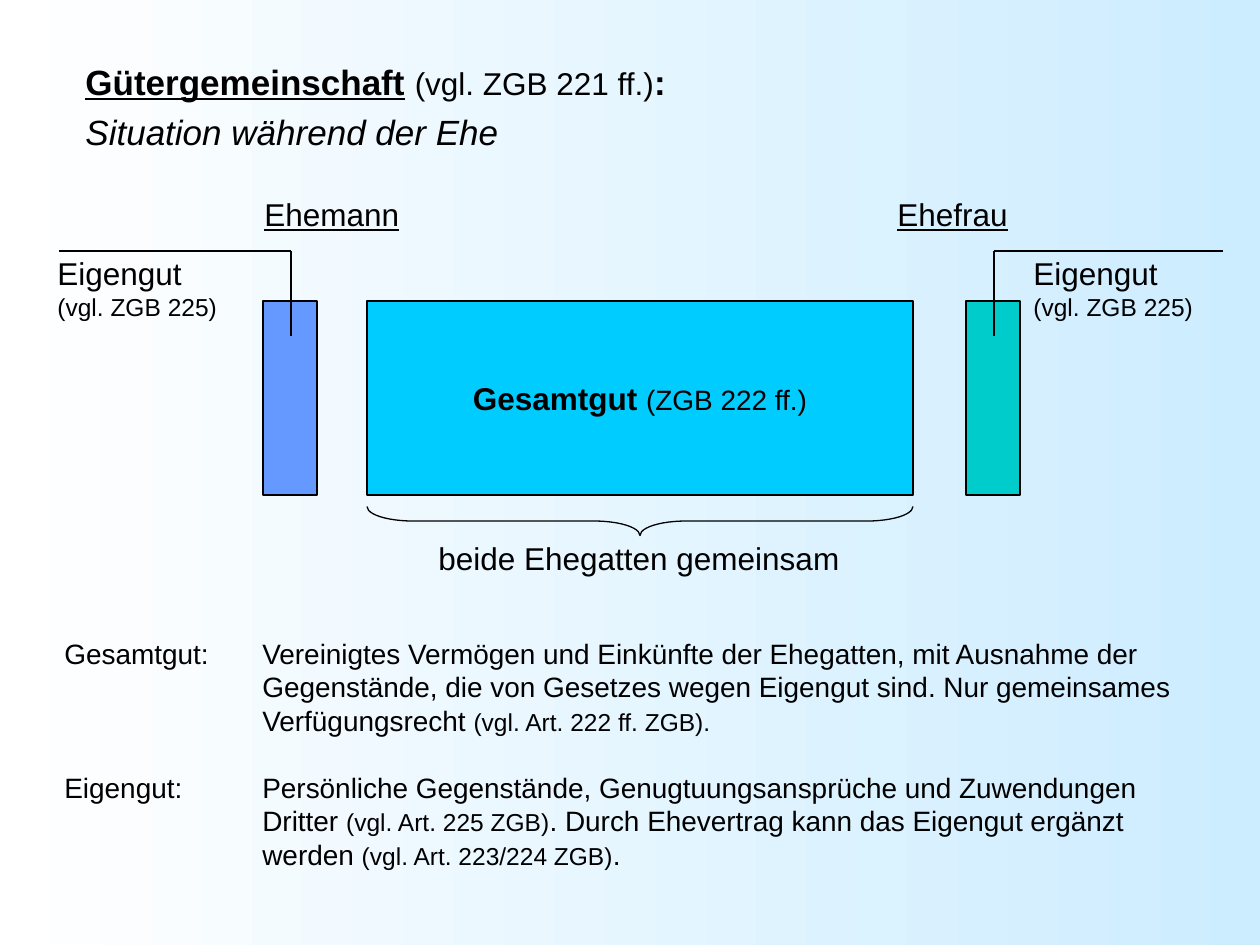
import dataclasses
import pptx
import pptx.dml.color
import pptx.enum.shapes
import pptx.enum.text
import pptx.oxml.ns
import pptx.util
from lxml import etree

SCALE = 914400 / 126
SHAPE = pptx.enum.shapes.MSO_SHAPE
ALIGN = pptx.enum.text.PP_ALIGN
ANCHOR = pptx.enum.text.MSO_ANCHOR


@dataclasses.dataclass(frozen=True)
class Theme:
    font: str = "Arial"
    ink: str = "000000"
    start: str = "FFFFFF"
    end: str = "CCECFF"
    man: str = "6699FF"
    wife: str = "00CCCC"
    joint: str = "00CCFF"
    head: int = 20
    label: int = 18
    body: int = 16
    small: int = 14
    line: float = 0.75


THEME = Theme()


def px(n):
    return pptx.util.Emu(round(n * SCALE))


def rgb(code):
    return pptx.dml.color.RGBColor.from_string(code)


def write(shape, paras, align=ALIGN.LEFT, anchor=ANCHOR.TOP, wrap=True,
          space=None, after=0, indent=0):
    frame = shape.text_frame
    frame.word_wrap = wrap
    frame.vertical_anchor = anchor
    for i, runs in enumerate(paras):
        para = frame.paragraphs[0] if i == 0 else frame.add_paragraph()
        para.alignment = align
        para.line_spacing = space
        if i < len(paras) - 1:
            para.space_after = pptx.util.Pt(after)
        if indent:
            props = para._p.get_or_add_pPr()
            props.set("marL", str(px(indent)))
            props.set("indent", str(-px(indent)))
        for text, size, style in runs:
            if text == "\n":
                para.add_line_break()
                continue
            run = para.add_run()
            run.text = text
            font = run.font
            font.name, font.size = THEME.font, pptx.util.Pt(size)
            font.color.rgb = rgb(THEME.ink)
            font.bold, font.italic = "b" in style, "i" in style
            font.underline = "u" in style


def label(slide, box, paras, **form):
    shape = slide.shapes.add_textbox(*map(px, box))
    write(shape, paras, **form)


def block(slide, kind, box, fill=None):
    shape = slide.shapes.add_shape(kind, *map(px, box))
    shape.shadow.inherit = False
    if fill:
        shape.fill.solid()
        shape.fill.fore_color.rgb = rgb(fill)
    else:
        shape.fill.background()
    shape.line.color.rgb = rgb(THEME.ink)
    shape.line.width = pptx.util.Pt(THEME.line)
    return shape


def stroke(slide, *ends):
    line = slide.shapes.add_connector(
        pptx.enum.shapes.MSO_CONNECTOR.STRAIGHT, *map(px, ends))
    line.line.color.rgb = rgb(THEME.ink)
    line.line.width = pptx.util.Pt(THEME.line)
    props = line._element.spPr
    etree.SubElement(props, pptx.oxml.ns.qn("a:effectLst"))


def title(slide, box):
    label(slide, box, [[
        ("Gütergemeinschaft", THEME.head, "bu"),
        (" ", THEME.head, "b"),
        ("(vgl. ZGB 221 ff.)", THEME.label, ""),
        (":", THEME.head, "b"),
        ("\n", THEME.head, ""),
        ("Situation während der Ehe", THEME.head, "i"),
    ]], anchor=ANCHOR.MIDDLE, space=1.2)


def spouse(slide, box, name, fill, head, bar, far, note):
    left, top, width, height = box
    hook = left + bar + 28
    rule = top + 62
    block(slide, SHAPE.RECTANGLE, (left + bar, top + 112, 54, height - 112), fill)
    label(slide, (left + head, top, 160, 50),
          [[(name, THEME.label, "u")]])
    stroke(slide, hook, top + 147, hook, rule)
    stroke(slide, hook, rule, left + far, rule)
    label(slide, (left + note, top + 59, 220, 79),
          [[("Eigengut", THEME.label, "")],
           [("(vgl. ZGB 225)", THEME.small, "")]])


def joint(slide, box):
    left, top, width, height = box
    deep, tall = 29, 194
    mass = block(slide, SHAPE.RECTANGLE, (left, top, width, tall), THEME.joint)
    write(mass, [[("Gesamtgut ", THEME.label, "b"),
                  ("(ZGB 222 ff.)", THEME.body, "")]],
          align=ALIGN.CENTER, anchor=ANCHOR.MIDDLE, wrap=False)
    mid = top + tall + 26
    brace = block(slide, SHAPE.LEFT_BRACE,
                  (left + (width - deep) / 2, mid - width / 2, deep, width))
    brace.rotation = 270
    brace.adjustments[0] = 1.58
    brace.adjustments[1] = 0.5
    label(slide, (left + 59, top + height - 50, 430, 50),
          [[("beide Ehegatten gemeinsam", THEME.label, "")]])


def terms(slide, box):
    body, small = THEME.body, THEME.small
    label(slide, box, [
        [("Gesamtgut:\tVereinigtes Vermögen und Einkünfte der Ehegatten, "
          "mit Ausnahme der Gegenstände, die von Gesetzes wegen Eigengut "
          "sind. Nur gemeinsames Verfügungsrecht ", body, ""),
         ("(vgl. Art. 222 ff. ZGB).", small, "")],
        [("Eigengut:\tPersönliche Gegenstände, Genugtuungsansprüche und "
          "Zuwendungen Dritter ", body, ""),
         ("(vgl. Art. 225 ZGB)", small, ""),
         (". Durch Ehevertrag kann das Eigengut ergänzt werden ", body, ""),
         ("(vgl. Art. 223/224 ZGB)", small, ""),
         (".", body, "")],
    ], after=19, indent=198)


def main():
    deck = pptx.Presentation()
    deck.slide_width, deck.slide_height = px(1260), px(945)
    slide = deck.slides.add_slide(deck.slide_layouts[6])
    fill = slide.background.fill
    fill.gradient()
    fill.gradient_angle = 0
    for stop, code in zip(fill.gradient_stops, (THEME.start, THEME.end)):
        stop.color.rgb = rgb(code)
    title(slide, (73, 55, 1114, 94))
    spouse(slide, (45, 189, 367, 306), "Ehemann", THEME.man,
           head=207, bar=218, far=14, note=0)
    spouse(slide, (885, 189, 356, 306), "Ehefrau", THEME.wife,
           head=0, bar=81, far=338, note=136)
    joint(slide, (367, 301, 546, 282))
    terms(slide, (52, 630, 1176, 248))
    deck.save("out.pptx")


if __name__ == "__main__":
    main()
